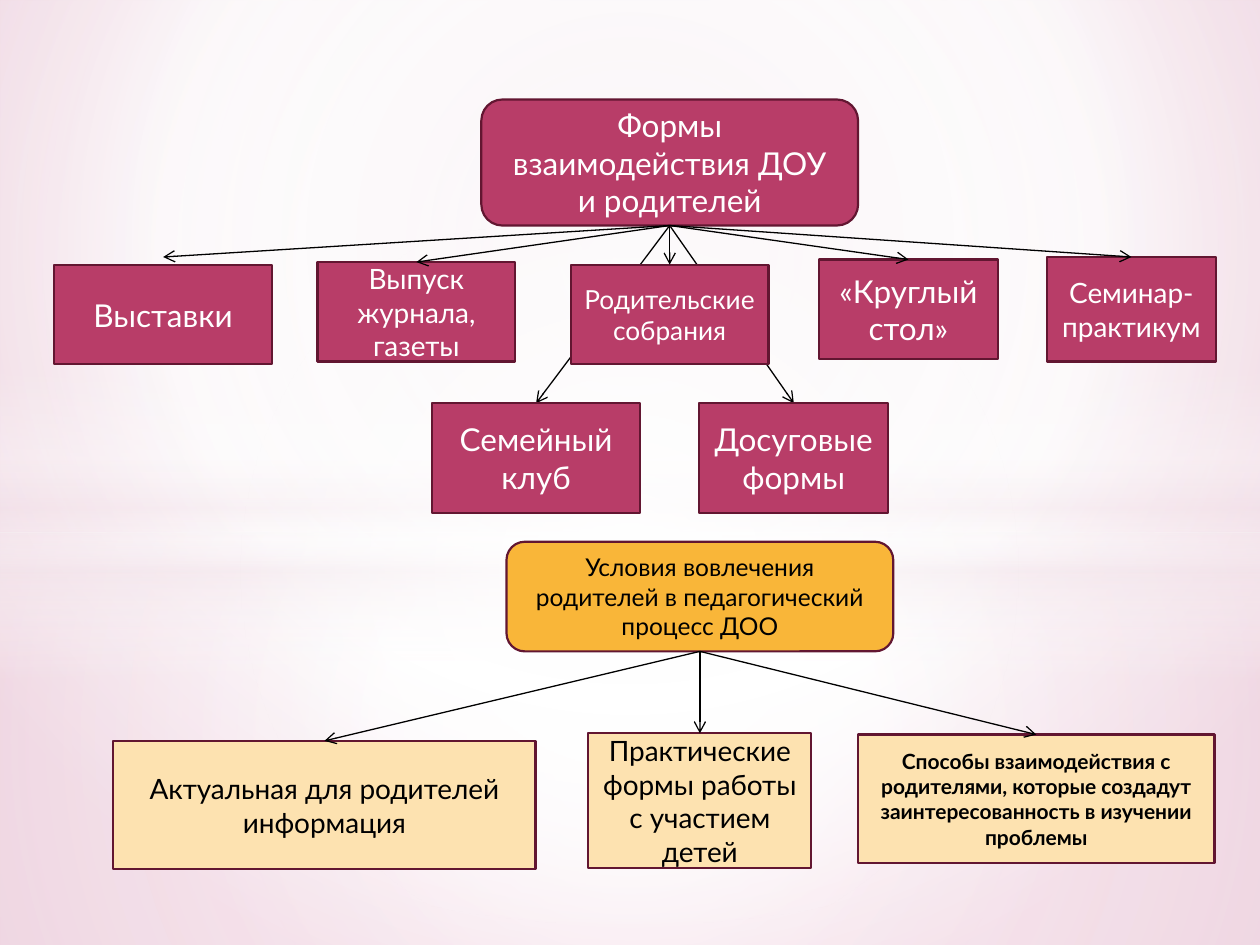
from collections import namedtuple

from lxml.etree import SubElement
from pptx import Presentation
from pptx.dml.color import RGBColor
from pptx.enum.shapes import MSO_CONNECTOR, MSO_SHAPE
from pptx.enum.text import MSO_ANCHOR, PP_ALIGN
from pptx.oxml.ns import qn
from pptx.util import Inches, Pt

BERRY = RGBColor(0xB8, 0x3D, 0x68)
WINE = RGBColor(0x62, 0x16, 0x31)
AMBER = RGBColor(0xF9, 0xB6, 0x39)
CREAM = RGBColor(0xFD, 0xE2, 0xB0)
WHITE = RGBColor(0xFF, 0xFF, 0xFF)
BLACK = RGBColor(0x00, 0x00, 0x00)
BLUSH = RGBColor(0xF4, 0xE7, 0xED)
ROSE = RGBColor(0xED, 0xDA, 0xE2)
PINK = RGBColor(0xE0, 0x9D, 0xBC)

CENTRE = (50, 50, 50, 50)
Node = namedtuple("Node", "text left top width height size")

FORMS = Node("Формы взаимодействия ДОУ и родителей", 3.82, 0.79, 2.99, 1, 18)
MAIN_FORMS = [
    Node("Выставки", 0.43, 2.1, 1.73, 0.79, 18),
    Node("Выпуск журнала, газеты", 2.52, 2.08, 1.57, 0.79, 16),
    Node("Родительские собрания", 4.53, 2.1, 1.57, 0.79, 15),
    Node("«Круглый стол»", 6.5, 2.06, 1.42, 0.79, 18),
    Node("Семинар-практикум", 8.31, 2.04, 1.34, 0.83, 16),
]
LOWER_FORMS = [
    Node("Семейный клуб", 3.43, 3.2, 1.65, 0.87, 18),
    Node("Досуговые формы", 5.55, 3.2, 1.5, 0.87, 18),
]
CONDITIONS = Node("Условия вовлечения родителей в педагогический процесс ДОО",
                  4.02, 4.3, 3.07, 0.87, 14)
WAYS = [
    Node("Актуальная для родителей информация", 0.9, 5.88, 3.35, 1.02, 16),
    Node("Практические формы работы с участием детей", 4.67, 5.82, 1.77, 1.07, 16),
    Node("Способы взаимодействия с родителями, которые создадут "
         "заинтересованность в изучении проблемы", 6.81, 5.83, 2.83, 1.02, 12),
]


def top_centre(node):
    return node.left + node.width / 2, node.top


def bottom_centre(node):
    return node.left + node.width / 2, node.top + node.height


class SlideBuilder:
    font = "Lato"
    outline = WINE

    def __init__(self, slide):
        self.slide = slide

    def gradient(self, properties, stops, focus=None):
        solid = properties.find(qn("a:solidFill"))
        grad = SubElement(properties, qn("a:gradFill"), rotWithShape="1")
        properties.replace(solid, grad)
        stop_list = SubElement(grad, qn("a:gsLst"))
        for position, color, opacity in stops:
            stop = SubElement(stop_list, qn("a:gs"), pos=str(position * 1000))
            rgb = SubElement(stop, qn("a:srgbClr"), val=str(color))
            if opacity < 100:
                SubElement(rgb, qn("a:alpha"), val=str(opacity * 1000))
        if focus:
            circle = SubElement(grad, qn("a:path"))
            circle.set("path", "circle")
            edges = {side: str(value * 1000) for side, value in zip("ltrb", focus)}
            SubElement(circle, qn("a:fillToRect"), edges)
        else:
            SubElement(grad, qn("a:lin"), ang="5400000", scaled="0")

    def background(self, stops, focus):
        self.slide.background.fill.solid()
        self.gradient(self.slide.element.find(".//" + qn("p:bgPr")), stops, focus)

    def shape(self, kind, left, top, width, height, fill):
        shape = self.slide.shapes.add_shape(
            kind, Inches(left), Inches(top), Inches(width), Inches(height))
        shape.shadow.inherit = False
        shape.fill.solid()
        shape.fill.fore_color.rgb = fill
        return shape

    def glow(self, kind, top, height, stops, focus=None):
        glow = self.shape(kind, 0, top, 10, height, WHITE)
        glow.line.fill.background()
        self.gradient(glow.element.spPr, stops, focus)

    def box(self, node, fill, color, kind=MSO_SHAPE.RECTANGLE, bold=False):
        box = self.shape(kind, node.left, node.top, node.width, node.height, fill)
        box.line.color.rgb = self.outline
        box.line.width = Pt(1.25)
        frame = box.text_frame
        frame.text = node.text
        frame.word_wrap = True
        frame.vertical_anchor = MSO_ANCHOR.MIDDLE
        paragraph = frame.paragraphs[0]
        paragraph.alignment = PP_ALIGN.CENTER
        font = paragraph.runs[0].font
        font.name = self.font
        font.size = Pt(node.size)
        font.bold = bold
        font.color.rgb = color

    def arrow(self, start, end):
        arrow = self.slide.shapes.add_connector(
            MSO_CONNECTOR.STRAIGHT, *(Inches(value) for value in (*start, *end)))
        arrow.line.color.rgb = BLACK
        arrow.line.width = Pt(0.75)
        properties = arrow.element.spPr
        SubElement(properties.find(qn("a:ln")), qn("a:tailEnd"), type="arrow")
        SubElement(properties, qn("a:effectLst"))


def main():
    presentation = Presentation()
    presentation.slide_width = Inches(10)
    presentation.slide_height = Inches(7.5)
    builder = SlideBuilder(presentation.slides.add_slide(presentation.slide_layouts[6]))

    builder.background([(0, ROSE, 100), (60, WHITE, 100), (100, PINK, 100)],
                       (20, 10, 20, 60))
    builder.glow(MSO_SHAPE.RECTANGLE, 4.23, 3.27,
                 [(0, WHITE, 91), (37, WHITE, 76), (100, BLUSH, 79)], CENTRE)
    builder.glow(MSO_SHAPE.RECTANGLE, 0, 4.23,
                 [(0, WHITE, 89), (48, WHITE, 62), (100, BLUSH, 79)], CENTRE)
    builder.glow(MSO_SHAPE.RECTANGLE, 2.9, 2.5,
                 [(0, WHITE, 0), (29, WHITE, 30), (45, BLUSH, 40),
                  (55, WHITE, 26), (65, BLUSH, 60), (100, WHITE, 0)])
    builder.glow(MSO_SHAPE.OVAL, 1.75, 5.58, [(0, WHITE, 100), (54, WHITE, 0)], CENTRE)

    for form in LOWER_FORMS:
        builder.arrow(bottom_centre(FORMS), top_centre(form))
    builder.box(FORMS, BERRY, WHITE, MSO_SHAPE.ROUNDED_RECTANGLE)
    for form in MAIN_FORMS + LOWER_FORMS:
        builder.box(form, BERRY, WHITE)
    exhibitions, *other_forms = MAIN_FORMS
    builder.arrow(bottom_centre(FORMS), (top_centre(exhibitions)[0], 2.04))
    for form in other_forms:
        builder.arrow(bottom_centre(FORMS), top_centre(form))

    builder.box(CONDITIONS, AMBER, BLACK, MSO_SHAPE.ROUNDED_RECTANGLE)
    for way in WAYS:
        builder.box(way, CREAM, BLACK, bold=way is WAYS[-1])
    for way in WAYS:
        builder.arrow(bottom_centre(CONDITIONS), top_centre(way))

    presentation.save("out.pptx")


if __name__ == "__main__":
    main()
